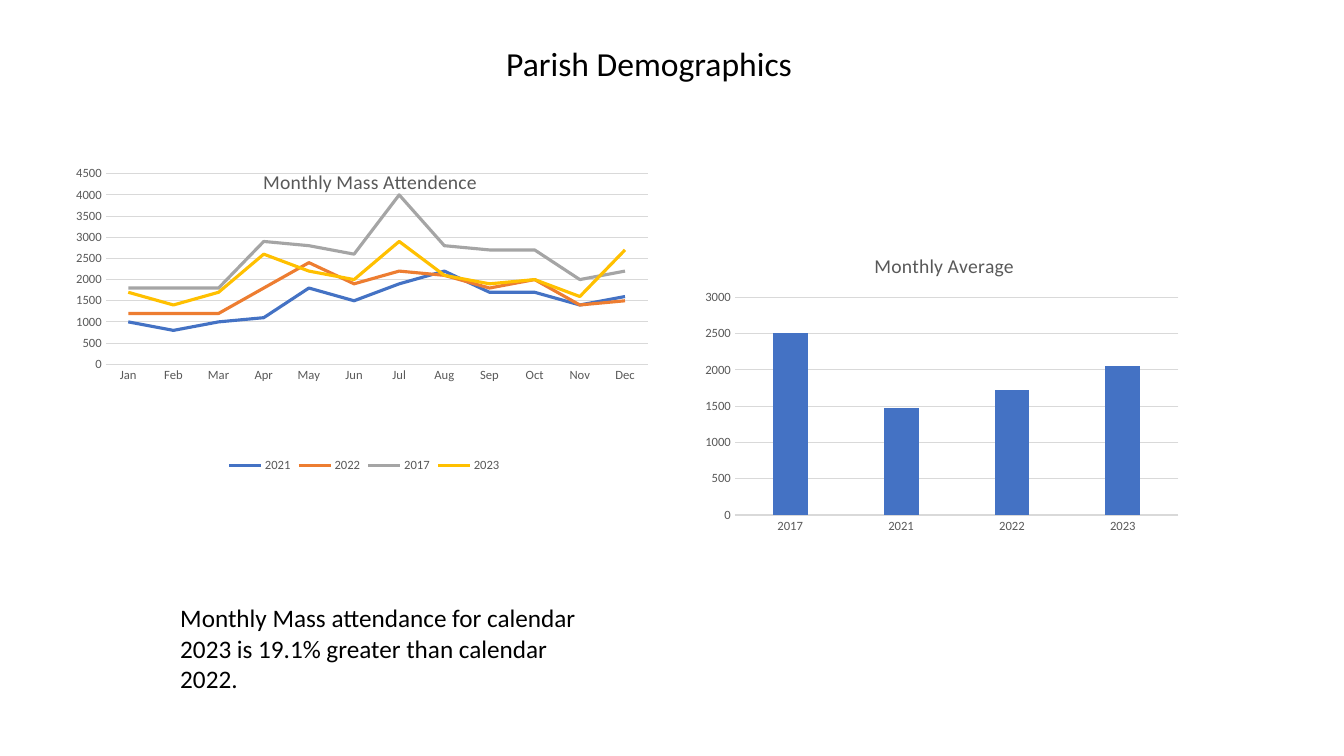
from lxml.etree import SubElement
from pptx import Presentation
from pptx.chart.data import CategoryChartData
from pptx.dml.color import RGBColor
from pptx.enum.chart import XL_CHART_TYPE, XL_LEGEND_POSITION, XL_TICK_MARK
from pptx.enum.text import MSO_ANCHOR, PP_ALIGN
from pptx.oxml.ns import qn
from pptx.util import Pt

COLORS = {"ink": "000000", "label": "595959", "grid": "D9D9D9", "blue": "4472C4",
          "orange": "ED7D31", "gray": "A5A5A5", "yellow": "FFC000"}
MONTHS = "Jan Feb Mar Apr May Jun Jul Aug Sep Oct Nov Dec".split()
ATTENDANCE = {
    "2021": [1000, 800, 1000, 1100, 1800, 1500, 1900, 2200, 1700, 1700, 1400, 1600],
    "2022": [1200, 1200, 1200, 1800, 2400, 1900, 2200, 2100, 1800, 2000, 1400, 1500],
    "2017": [1800, 1800, 1800, 2900, 2800, 2600, 4000, 2800, 2700, 2700, 2000, 2200],
    "2023": [1700, 1400, 1700, 2600, 2200, 2000, 2900, 2100, 1900, 2000, 1600, 2700],
}
AVERAGES = {"2017": 2510, "2021": 1470, "2022": 1720, "2023": 2050}


def rgb(name):
    return RGBColor.from_string(COLORS[name])


def set_layout(parent, after, **values):
    """Place a chart part by fractions of the chart, directly after a sibling (or first)."""
    for old in parent.findall(qn("c:layout")):
        parent.remove(old)
    layout = SubElement(parent, qn("c:layout"))
    manual = SubElement(layout, qn("c:manualLayout"))
    if "w" in values:
        SubElement(manual, qn("c:layoutTarget")).set("val", "inner")
    for key in ("x", "y"):
        SubElement(manual, qn(f"c:{key}Mode")).set("val", "edge")
    for key, value in values.items():
        SubElement(manual, qn(f"c:{key}")).set("val", str(value))
    if after is None:
        parent.insert(0, layout)
    else:
        after.addnext(layout)


class Deck:
    font = "Calibri"

    def __init__(self, width, height):
        self.prs = Presentation()
        self.prs.slide_width, self.prs.slide_height = Pt(width), Pt(height)
        self.s = self.prs.slides.add_slide(self.prs.slide_layouts[6])

    def style(self, font, size, color):
        font.name, font.size, font.bold = self.font, Pt(size), False
        font.color.rgb = rgb(color)

    def text(self, box, words, size, align=PP_ALIGN.LEFT, anchor=MSO_ANCHOR.TOP, spacing=1.0):
        tf = self.s.shapes.add_textbox(*map(Pt, box)).text_frame
        tf.word_wrap, tf.vertical_anchor = True, anchor
        p = tf.paragraphs[0]
        p.alignment, p.line_spacing = align, spacing
        r = p.add_run()
        r.text = words
        self.style(r.font, size, "ink")

    def chart(self, kind, box, title, title_at, plot_at, categories, series, top, step):
        data = CategoryChartData(number_format="0")
        data.categories = categories
        for name, values in series.items():
            data.add_series(name, values)
        chart = self.s.shapes.add_chart(kind, *map(Pt, box), data).chart
        self.style(chart.font, 10, "ink")
        chart.has_legend = False
        chart.has_title = True
        r = chart.chart_title.text_frame.paragraphs[0].add_run()
        r.text = title
        self.style(r.font, 14, "label")
        title_xml = chart.chart_title._element
        set_layout(title_xml, title_xml.find(qn("c:tx")), **dict(zip("xy", title_at)))
        chart.chart_title.include_in_layout = False
        plot_xml = chart.plots[0]._element.getparent()
        set_layout(plot_xml, None, **dict(zip("xywh", plot_at)))
        self.axes(chart, top, step)
        return chart

    def axes(self, chart, top, step):
        for axis in (chart.category_axis, chart.value_axis):
            axis.major_tick_mark = axis.minor_tick_mark = XL_TICK_MARK.NONE
            self.style(axis.tick_labels.font, 9, "label")
        values = chart.value_axis
        values.minimum_scale, values.maximum_scale, values.major_unit = 0, top, step
        values.tick_labels.number_format = "0"
        values.tick_labels.number_format_is_linked = False
        values.format.line.fill.background()
        values.has_major_gridlines = True
        for line in (chart.category_axis.format.line, values.major_gridlines.format.line):
            line.color.rgb, line.width = rgb("grid"), Pt(0.75)

    def line_chart(self, *args, colors):
        chart = self.chart(XL_CHART_TYPE.LINE, *args)
        for series, color in zip(chart.plots[0].series, colors):
            series.smooth = False
            series.format.line.color.rgb = rgb(color)
            series.format.line.width = Pt(2.25)
        chart.has_legend = True
        chart.legend.position = XL_LEGEND_POSITION.BOTTOM
        chart.legend.include_in_layout = False
        self.style(chart.legend.font, 9, "label")

    def column_chart(self, *args, color):
        plot = self.chart(XL_CHART_TYPE.COLUMN_CLUSTERED, *args).plots[0]
        plot.vary_by_categories = False
        plot.gap_width, plot.overlap = 219, -27
        fill = plot.series[0].format.fill
        fill.solid()
        fill.fore_color.rgb = rgb(color)


def main():
    deck = Deck(960, 540)
    deck.text((71.3, 28.8, 784.8, 36), "Parish Demographics", 24,
              PP_ALIGN.CENTER, MSO_ANCHOR.MIDDLE, 0.9)
    deck.line_chart((40.3, 117.4, 439.9, 223.2), "Monthly Mass Attendence", (0.33, 0),
                    (0.08, 0.03, 0.88, 0.61), MONTHS, ATTENDANCE, 4500, 500,
                    colors=("blue", "orange", "gray", "yellow"))
    deck.column_chart((496.1, 169.2, 360, 216), "Monthly Average", (0.35, 0.04),
                      (0.08, 0.2, 0.88, 0.72), list(AVERAGES),
                      {"Series 1": list(AVERAGES.values())}, 3000, 500, color="blue")
    deck.text((121.7, 427, 319.7, 72.7), "Monthly Mass attendance for calendar 2023 "
              "is 19.1% greater than calendar 2022.", 18)
    deck.prs.save("out.pptx")


if __name__ == "__main__":
    main()
